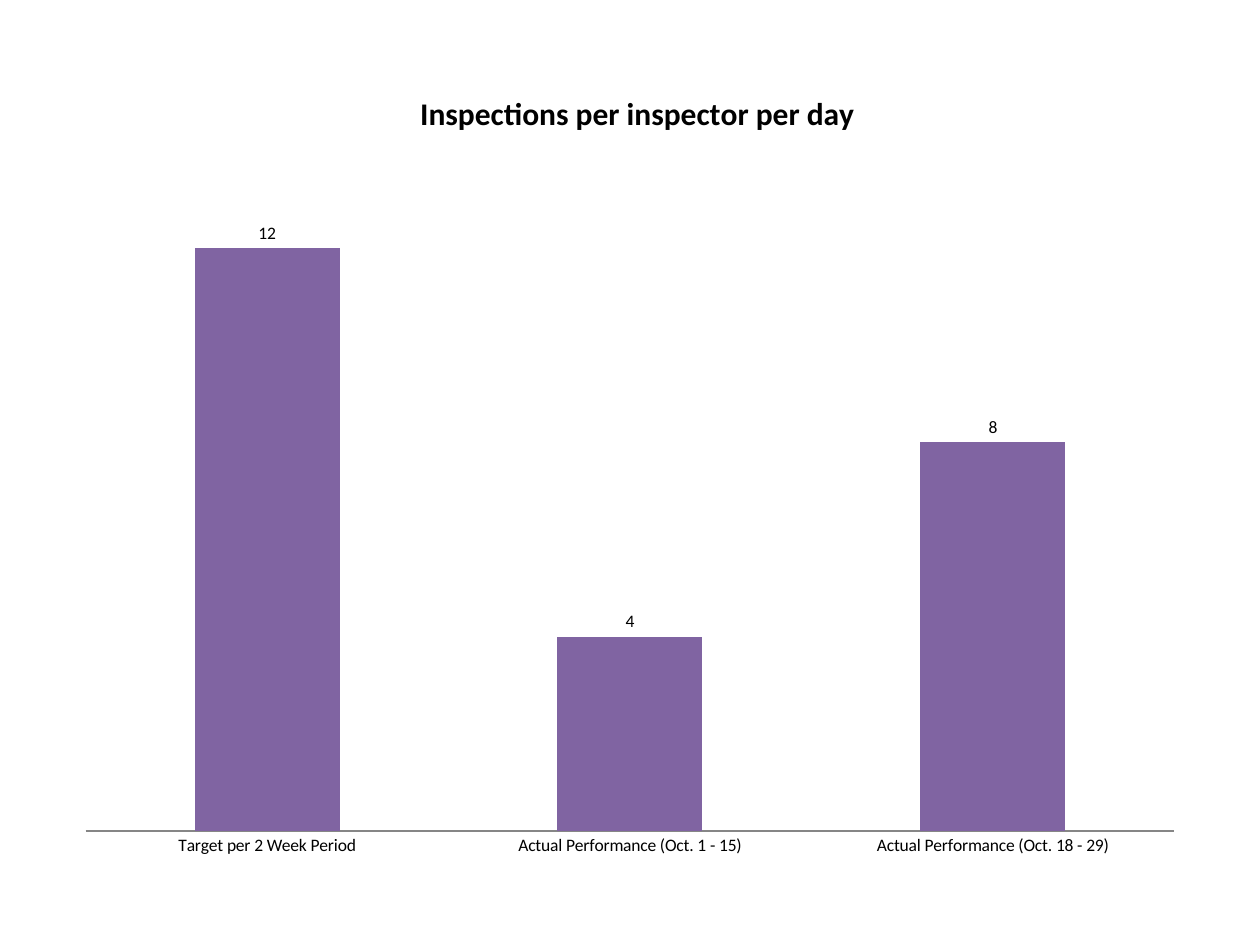
from lxml.etree import SubElement
from pptx import Presentation
from pptx.chart.data import CategoryChartData
from pptx.dml.color import RGBColor
from pptx.enum.chart import XL_CHART_TYPE, XL_LABEL_POSITION, XL_TICK_MARK
from pptx.oxml.ns import qn
from pptx.util import Emu, Pt

BLACK = RGBColor(0x00, 0x00, 0x00)
GRAY = RGBColor(0x86, 0x86, 0x86)
PURPLE = RGBColor(0x80, 0x64, 0xA2)
FONT = "Calibri"
TITLE = "Inspections per inspector per day"
INSPECTIONS = {
    "Target per 2 Week Period": 12,
    "Actual Performance (Oct. 1 - 15)": 4,
    "Actual Performance (Oct. 18 - 29)": 8,
}


def px(n):
    """Convert pixels at 126 to the inch into EMU."""
    return Emu(round(n * 914400 / 126))


def set_font(font, size=10, bold=False, color=BLACK):
    """Format a font."""
    font.name, font.size, font.bold = FONT, Pt(size), bold
    font.color.rgb = color


def write(tf, text, **fmt):
    """Write one formatted run into a text frame."""
    r = tf.paragraphs[0].add_run()
    r.text = text
    set_font(r.font, **fmt)


def set_layout(parent, target=None, **fractions):
    """Place a chart part at fractions of the chart's size."""
    layout = parent.find(qn("c:layout"))
    if layout is None:
        layout = SubElement(parent, qn("c:layout"))
        parent.insert(1 if parent.tag == qn("c:title") else 0, layout)
    manual = SubElement(layout, qn("c:manualLayout"))
    if target:
        SubElement(manual, qn("c:layoutTarget")).set("val", target)
    for side in ("x", "y"):
        SubElement(manual, qn(f"c:{side}Mode")).set("val", "edge")
    for name, value in fractions.items():
        SubElement(manual, qn(f"c:{name}")).set("val", str(value))


def add_inspection_chart(s, x, y, w, h):
    """Add the column chart of inspections within the given box."""
    data = CategoryChartData(number_format="0")
    data.categories = list(INSPECTIONS)
    data.add_series(TITLE, list(INSPECTIONS.values()))
    chart = s.shapes.add_chart(
        XL_CHART_TYPE.COLUMN_CLUSTERED, px(x), px(y), px(w), px(h), data
    ).chart
    set_font(chart.font)
    chart.has_legend = False
    chart.has_title = True
    title = chart.chart_title
    write(title.text_frame, TITLE, size=18, bold=True)
    title.include_in_layout = False
    set_layout(title._element, x=0.31, y=0.04)

    plot = chart.plots[0]
    plot.vary_by_categories = False
    plot.gap_width, plot.overlap = 150, -25
    fill = plot.series[0].format.fill
    fill.solid()
    fill.fore_color.rgb = PURPLE
    plot.has_data_labels = True
    labels = plot.data_labels
    labels.show_value = True
    labels.number_format, labels.number_format_is_linked = "0", False
    labels.position = XL_LABEL_POSITION.OUTSIDE_END
    set_font(labels.font)

    axis = chart.category_axis
    axis.major_tick_mark = axis.minor_tick_mark = XL_TICK_MARK.NONE
    axis.format.line.color.rgb = GRAY
    axis.format.line.width = Pt(0.75)
    set_font(axis.tick_labels.font)
    values = chart.value_axis
    values.visible = values.has_major_gridlines = False
    values.minimum_scale, values.maximum_scale = 0, 14
    plot_area = chart._chartSpace.chart.plotArea
    set_layout(plot_area, target="inner", x=0.02, y=0.12, w=0.96, h=0.83)


def main():
    """Build and save the slide."""
    prs = Presentation()
    prs.slide_width, prs.slide_height = px(1260), px(945)
    s = prs.slides.add_slide(prs.slide_layouts[6])
    add_inspection_chart(s, 63, 53, 1134, 819)
    prs.save("out.pptx")


if __name__ == "__main__":
    main()
